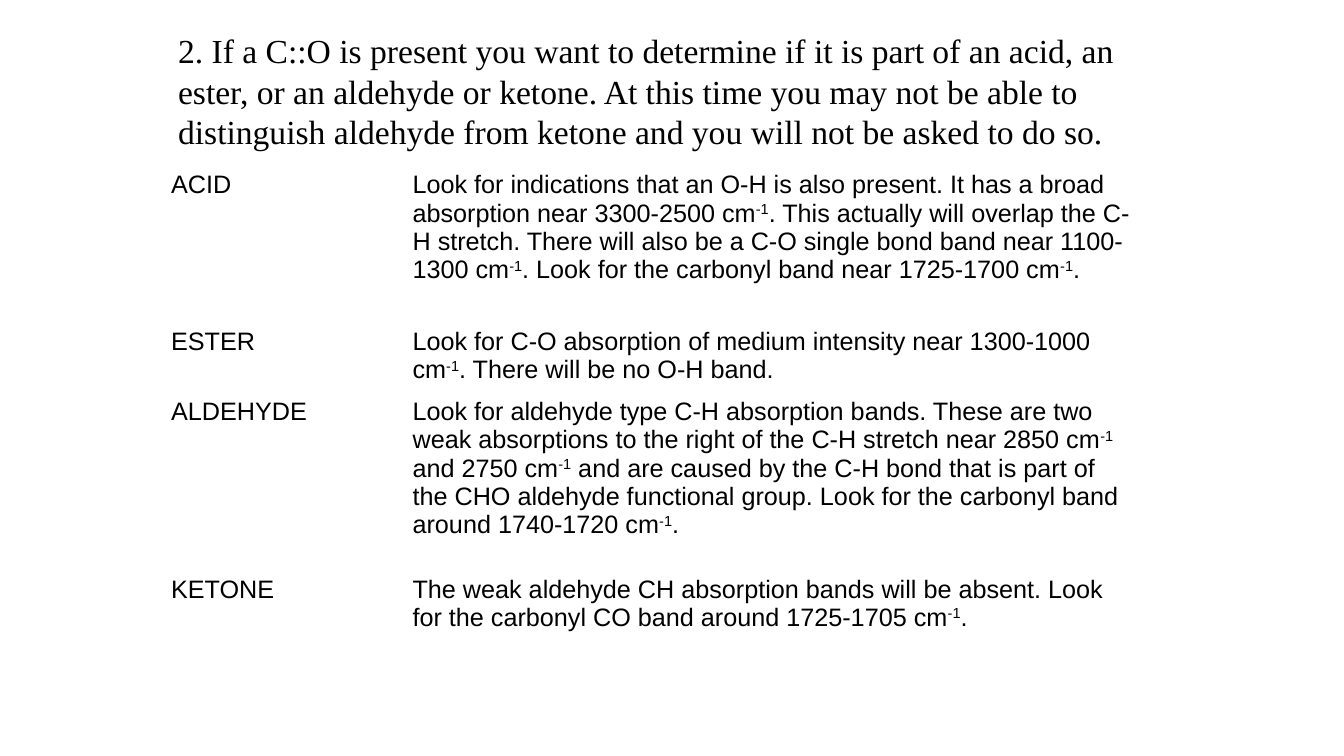
import dataclasses

import pptx
import pptx.dml.color
import pptx.enum.text
import pptx.presentation
import pptx.slide
import pptx.table
import pptx.text.text
import pptx.util

PX = 9525  # EMU per px, 96 px to the inch
COLORS = {"text": "000000", "paper": "FFFFFF"}
TITLE_FONT, TABLE_FONT = "Times New Roman", "Arial"
TITLE_SIZE, TABLE_SIZE = 24, 18
UNIT, EXPONENT = "cm", "-1"

LEFT = 160
TITLE_TOP, TITLE_WIDTH, TITLE_HEIGHT = 24, 960, 165
TABLE_TOP = 160
COLUMN_WIDTHS = (230, 690)
CELL_MARGIN = 3

TITLE = (
    "2. If a C::O is present you want to determine if it is part of an acid, an ester, "
    "or an aldehyde or ketone. At this time you may not be able to distinguish aldehyde "
    "from ketone and you will not be asked to do so."
)


@dataclasses.dataclass(frozen=True)
class Compound:
    name: str
    clue: str
    height: int


COMPOUNDS = (
    Compound(
        "ACID",
        "Look for indications that an O-H is also present. It has a broad absorption near "
        "3300-2500 cm-1. This actually will overlap the C-H stretch. There will also be a "
        "C-O single bond band near 1100-1300 cm-1. Look for the carbonyl band near "
        "1725-1700 cm-1.",
        149,
    ),
    Compound(
        "ESTER",
        "Look for C-O absorption of medium intensity near 1300-1000 cm-1. There will be "
        "no O-H band.",
        67,
    ),
    Compound(
        "ALDEHYDE",
        "Look for aldehyde type C-H absorption bands. These are two weak absorptions to the "
        "right of the C-H stretch near 2850 cm-1 and 2750 cm-1 and are caused by the C-H "
        "bond that is part of the CHO aldehyde functional group. Look for the carbonyl band "
        "around 1740-1720 cm-1.",
        169,
    ),
    Compound(
        "KETONE",
        "The weak aldehyde CH absorption bands will be absent. Look for the carbonyl CO band "
        "around 1725-1705 cm-1.",
        87,
    ),
)


def px(length: int) -> pptx.util.Emu:
    return pptx.util.Emu(length * PX)


def color(name: str) -> pptx.dml.color.RGBColor:
    return pptx.dml.color.RGBColor.from_string(COLORS[name])


def format_runs(para: pptx.text.text._Paragraph, font: str, size: int) -> None:
    for span in para.runs:
        span.font.name = font
        span.font.size = pptx.util.Pt(size)
        span.font.color.rgb = color("text")


def write_with_exponents(para: pptx.text.text._Paragraph, text: str) -> None:
    """Write the text with the exponent of each unit raised."""
    *measures, ending = text.split(UNIT + EXPONENT)
    for measure in measures:
        para.add_run().text = measure + UNIT
        exponent = para.add_run()
        exponent.text = EXPONENT
        exponent._r.get_or_add_rPr().set("baseline", "30000")
    para.add_run().text = ending


def fill_cell(cell: pptx.table._Cell, text: str) -> None:
    cell.fill.solid()
    cell.fill.fore_color.rgb = color("paper")
    cell.margin_left = cell.margin_right = px(CELL_MARGIN)
    cell.margin_top = cell.margin_bottom = px(CELL_MARGIN)
    para = cell.text_frame.paragraphs[0]
    write_with_exponents(para, text)
    format_runs(para, TABLE_FONT, TABLE_SIZE)


def add_title(page: pptx.slide.Slide) -> None:
    box = page.shapes.title
    box.left, box.top = px(LEFT), px(TITLE_TOP)
    box.width, box.height = px(TITLE_WIDTH), px(TITLE_HEIGHT)
    frame = box.text_frame
    frame.text = TITLE
    frame.word_wrap = True
    frame.auto_size = pptx.enum.text.MSO_AUTO_SIZE.NONE
    frame.vertical_anchor = pptx.enum.text.MSO_ANCHOR.TOP
    para = frame.paragraphs[0]
    para.alignment = pptx.enum.text.PP_ALIGN.LEFT
    format_runs(para, TITLE_FONT, TITLE_SIZE)


def add_compound_table(page: pptx.slide.Slide) -> None:
    table = page.shapes.add_table(
        len(COMPOUNDS), len(COLUMN_WIDTHS), px(LEFT), px(TABLE_TOP),
        px(sum(COLUMN_WIDTHS)), px(sum(compound.height for compound in COMPOUNDS)),
    ).table
    table.first_row = table.horz_banding = False
    for column, width in zip(table.columns, COLUMN_WIDTHS):
        column.width = px(width)
    for row, compound in zip(table.rows, COMPOUNDS):
        row.height = px(compound.height)
        for cell, text in zip(row.cells, (compound.name, compound.clue)):
            fill_cell(cell, text)


def main() -> None:
    deck = pptx.Presentation()
    deck.slide_width, deck.slide_height = px(1280), px(720)
    title_only = deck.slide_layouts.get_by_name("Title Only")
    page = deck.slides.add_slide(title_only)

    # Question at the top
    add_title(page)

    # Clues for each compound
    add_compound_table(page)

    deck.save("out.pptx")


if __name__ == "__main__":
    main()
